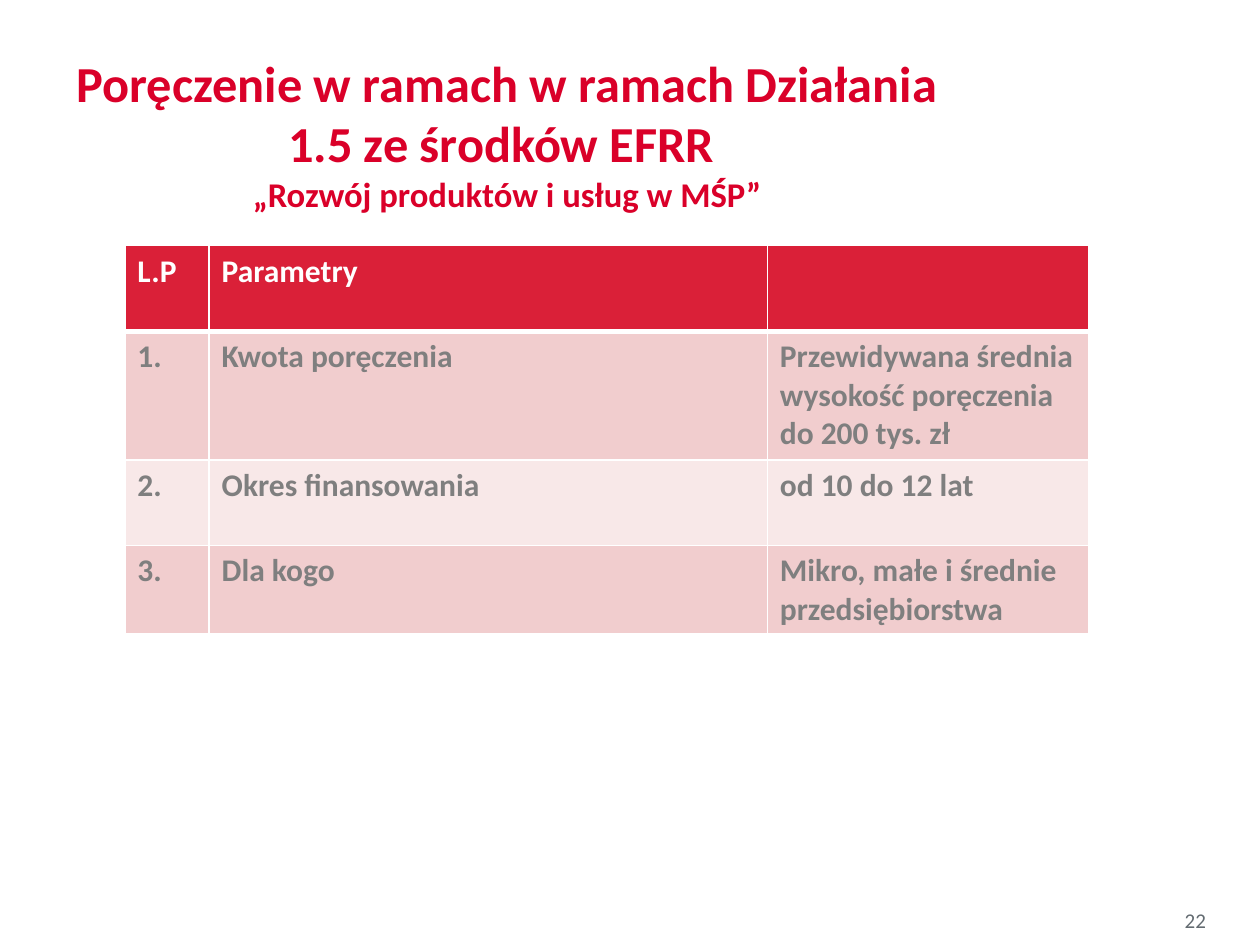
from dataclasses import dataclass

from lxml import etree
from pptx import Presentation
from pptx import util as u
from pptx.dml.color import RGBColor
from pptx.enum import text
from pptx.oxml.ns import qn


@dataclass(frozen=True)
class Theme:
    font: str = "Calibri"
    title: str = "DA0029"
    header: str = "DA2038"
    bands: tuple = ("F1CDCE", "F8E8E8")
    white: str = "FFFFFF"
    body: str = "7F7F7F"
    number: str = "636B71"
    title_size: float = 28.8
    subtitle_size: float = 19.8
    table_size: float = 18
    number_size: float = 12


T = Theme()
TITLE = "Poręczenie w ramach w ramach Działania 1.5 ze środków EFRR "
SUBTITLE = "„Rozwój produktów i usług w MŚP”"
PAGE = "22"
ROWS = [
    ("L.P", "Parametry", ""),
    ("1.", "Kwota poręczenia", "Przewidywana średnia wysokość poręczenia do 200 tys. zł"),
    ("2.", "Okres finansowania", "od 10 do 12 lat"),
    ("3.", "Dla kogo", "Mikro, małe i średnie przedsiębiorstwa"),
]
COL_WIDTHS = (0.67, 4.43, 2.55)
ROW_HEIGHTS = (0.68, 1.02, 0.68, 0.7)


def add_run(p, content, *, size, color, bold=False):
    r = p.add_run()
    r.text = content
    r.font.name = T.font
    r.font.size = u.Pt(size)
    r.font.bold = bold
    r.font.color.rgb = RGBColor.from_string(color)


def add_box(s, left, top, width, height, align):
    """Add a wrapped, vertically centred text box and return its paragraph."""
    sp = s.shapes.add_textbox(*map(u.Inches, (left, top, width, height)))
    tf = sp.text_frame
    tf.word_wrap = True
    tf.vertical_anchor = text.MSO_ANCHOR.MIDDLE
    p = tf.paragraphs[0]
    p.alignment = align
    return p


def set_borders(cell, bottom):
    """Draw white cell borders, 1 pt except for the given bottom width."""
    tc_pr = cell._tc.get_or_add_tcPr()
    for side, width in (("L", 1), ("R", 1), ("T", 1), ("B", bottom)):
        ln = etree.SubElement(tc_pr, qn(f"a:ln{side}"), w=str(u.Pt(width)))
        fill = etree.SubElement(ln, qn("a:solidFill"))
        etree.SubElement(fill, qn("a:srgbClr"), val=T.white)


def add_parameters(s, left, top):
    size = map(u.Inches, (left, top, sum(COL_WIDTHS), sum(ROW_HEIGHTS)))
    table = s.shapes.add_table(len(ROWS), len(COL_WIDTHS), *size).table
    for col, width in zip(table.columns, COL_WIDTHS):
        col.width = u.Inches(width)
    for i, (row, height, values) in enumerate(zip(table.rows, ROW_HEIGHTS, ROWS)):
        row.height = u.Inches(height)
        header = i == 0
        fill = T.header if header else T.bands[(i - 1) % 2]
        for cell, value in zip(row.cells, values):
            # The rule under the header is shared with the first body row
            set_borders(cell, bottom=3 if header else 1)
            cell.fill.solid()
            cell.fill.fore_color.rgb = RGBColor.from_string(fill)
            if value:
                add_run(cell.text_frame.paragraphs[0], value, size=T.table_size,
                        color=T.white if header else T.body, bold=True)


def main():
    prs = Presentation()
    prs.slide_width, prs.slide_height = u.Inches(10), u.Inches(7.5)
    s = prs.slides.add_slide(prs.slide_layouts[6])

    p = add_box(s, 7.53, 7.1, 2.14, 0.4, text.PP_ALIGN.RIGHT)
    add_run(p, PAGE, size=T.number_size, color=T.number)

    p = add_box(s, 0.31, 0.3, 7.43, 1.51, text.PP_ALIGN.CENTER)
    add_run(p, TITLE, size=T.title_size, color=T.title, bold=True)
    p.add_line_break()
    add_run(p, SUBTITLE, size=T.subtitle_size, color=T.title, bold=True)

    add_parameters(s, 0.99, 1.95)
    prs.save("out.pptx")


if __name__ == "__main__":
    main()
